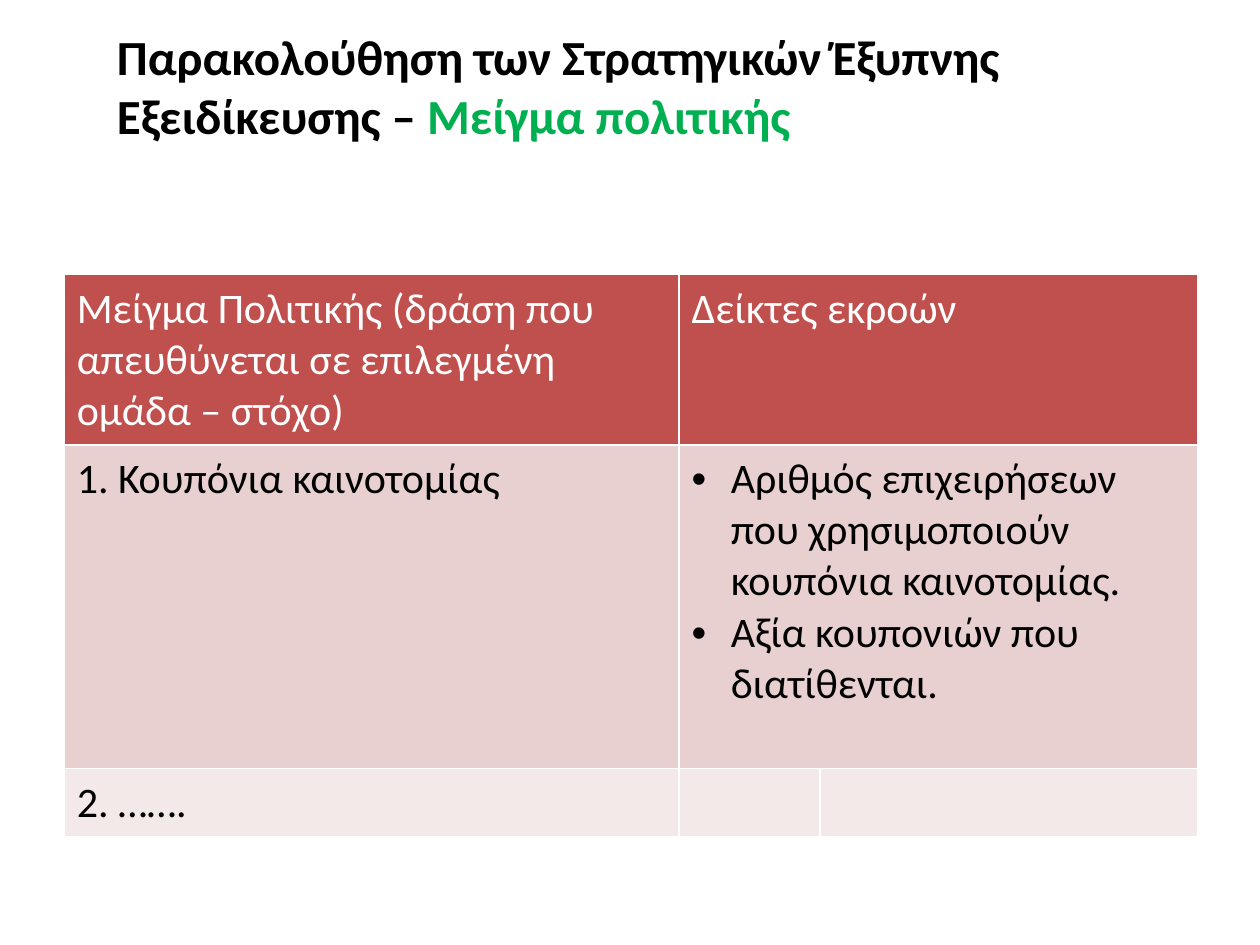
"""Build the slide on monitoring the policy mix of smart specialisation strategies."""
from lxml import etree
from pptx import Presentation
from pptx import util as u
from pptx.dml.color import RGBColor
from pptx.enum import text
from pptx.oxml import ns

TITLE = [
    ("Παρακολούθηση των Στρατηγικών Έξυπνης Εξειδίκευσης – ", "000000"),
    ("Μείγμα πολιτικής", "00B050"),
]
COLUMNS = [4.88, 1.12, 3]
ROWS = [
    {"height": 1.35, "fill": "C0504D", "color": "FFFFFF", "merged": True,
     "cells": [["Μείγμα Πολιτικής (δράση που απευθύνεται σε επιλεγμένη ομάδα – στόχο)"],
               ["Δείκτες εκροών"], []]},
    {"height": 2.57, "fill": "E8D0D0", "color": "000000", "merged": True,
     "cells": [["1. Κουπόνια καινοτομίας"],
               ["Αριθμός επιχειρήσεων που χρησιμοποιούν κουπόνια καινοτομίας.",
                "Αξία κουπονιών που διατίθενται."], []]},
    {"height": 0.54, "fill": "F4E9E9", "color": "000000", "merged": False,
     "cells": [["2. ……."], [], []]},
]
BORDER = "FFFFFF"
TITLE_FONT = {"name": "Calibri", "size": u.Pt(28), "bold": True}
CELL_FONT = {"name": "Calibri", "size": u.Pt(24), "bold": False}
TITLE_FRAME = {"word_wrap": True, "vertical_anchor": text.MSO_ANCHOR.MIDDLE,
               "margin_bottom": u.Inches(0.52)}
CELL_MARGINS = {"margin_left": u.Inches(0.1), "margin_right": u.Inches(0.1),
                "margin_top": u.Inches(0.07), "margin_bottom": u.Inches(0.07)}
TABLE_FLAGS = {"first_row": False, "horz_banding": False}


def rgb(value):
    """Turn a hex string into a colour."""
    return RGBColor.from_string(value)


def apply(target, values):
    """Set every attribute listed in a dict."""
    for name, value in values.items():
        setattr(target, name, value)


def add_run(paragraph, words, font, color):
    """Append formatted words to a paragraph."""
    run = paragraph.add_run()
    run.text = words
    apply(run.font, font)
    run.font.color.rgb = rgb(color)


def add_borders(cell):
    """Draw a thin line on all four sides of a cell."""
    properties = cell._tc.get_or_add_tcPr()
    for side in ("lnL", "lnR", "lnT", "lnB"):
        line = etree.SubElement(properties, ns.qn(f"a:{side}"), w=str(u.Pt(1)))
        fill = etree.SubElement(line, ns.qn("a:solidFill"))
        etree.SubElement(fill, ns.qn("a:srgbClr"), val=BORDER)


def add_bullet(paragraph):
    """Give a paragraph a hanging bullet."""
    properties = paragraph._p.get_or_add_pPr()
    indent = u.Inches(0.31)
    properties.set("marL", str(indent))
    properties.set("indent", str(-indent))
    etree.SubElement(properties, ns.qn("a:buFont"), typeface="Arial")
    etree.SubElement(properties, ns.qn("a:buChar"), char="•")


def fill_cell(cell, lines, row):
    """Format a cell and write its lines, bulleted when there are several."""
    add_borders(cell)
    cell.fill.solid()
    cell.fill.fore_color.rgb = rgb(row["fill"])
    apply(cell, CELL_MARGINS)
    for index, line in enumerate(lines):
        frame = cell.text_frame
        paragraph = frame.add_paragraph() if index else frame.paragraphs[0]
        if len(lines) > 1:
            add_bullet(paragraph)
        add_run(paragraph, line, CELL_FONT, row["color"])


def add_title(slide):
    """Place the two-colour heading."""
    box = slide.shapes.add_textbox(*map(u.Inches, (0.83, 0.29, 8.83, 1.25)))
    apply(box.text_frame, TITLE_FRAME)
    for words, color in TITLE:
        add_run(box.text_frame.paragraphs[0], words, TITLE_FONT, color)


def add_policy_table(slide):
    """Place the table of policy actions and output indicators."""
    height = sum(row["height"] for row in ROWS)
    area = map(u.Inches, (0.51, 2.18, sum(COLUMNS), height))
    table = slide.shapes.add_table(len(ROWS), len(COLUMNS), *area).table
    apply(table, TABLE_FLAGS)
    for column, width in zip(table.columns, COLUMNS):
        column.width = u.Inches(width)
    for r, row in enumerate(ROWS):
        table.rows[r].height = u.Inches(row["height"])
        if row["merged"]:
            table.cell(r, 1).merge(table.cell(r, 2))
        for c, lines in enumerate(row["cells"]):
            fill_cell(table.cell(r, c), lines, row)


def main():
    """Create and save the presentation."""
    deck = Presentation()
    apply(deck, {"slide_width": u.Inches(10), "slide_height": u.Inches(7.5)})
    slide = deck.slides.add_slide(deck.slide_layouts[6])
    add_title(slide)
    add_policy_table(slide)
    deck.save("out.pptx")


if __name__ == "__main__":
    main()
